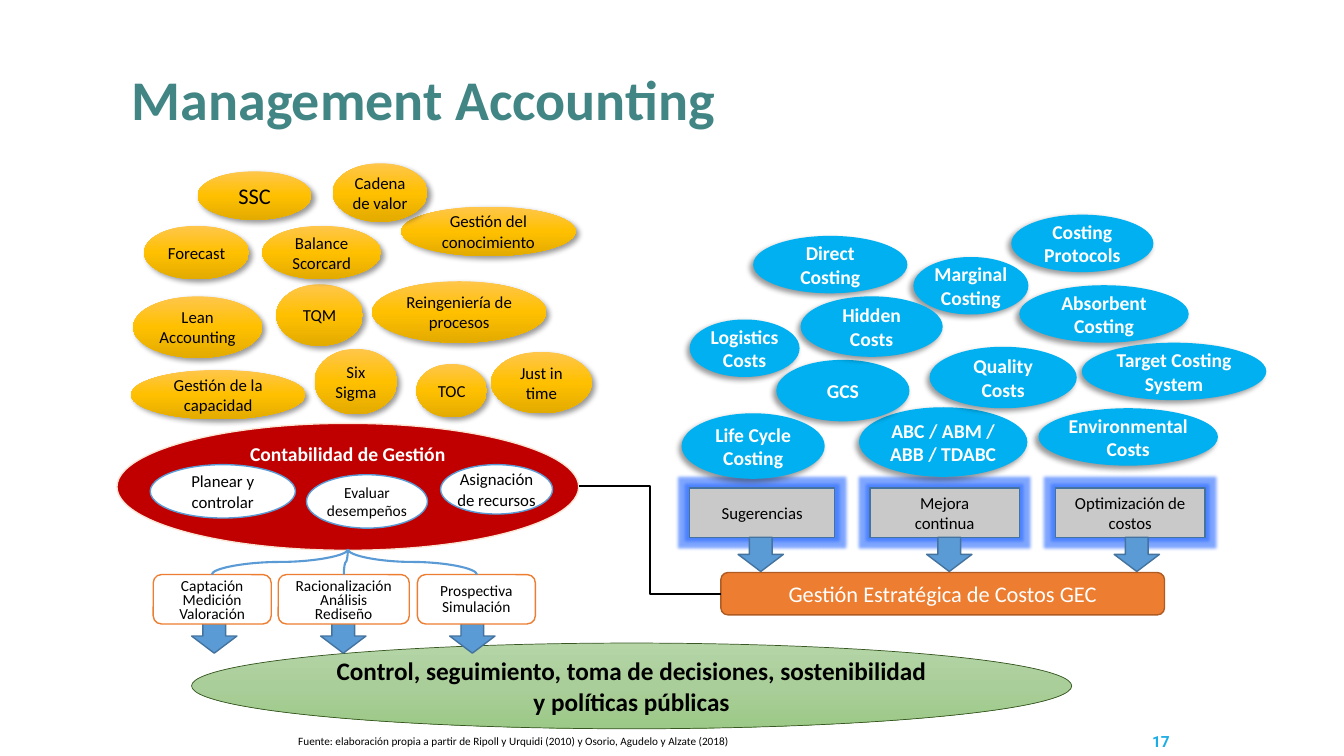
"""Build the Management Accounting slide."""
from copy import deepcopy

from lxml import etree
from pptx import Presentation
from pptx.dml.color import RGBColor
from pptx.enum.shapes import MSO_CONNECTOR, MSO_SHAPE
from pptx.enum.text import MSO_ANCHOR, PP_ALIGN
from pptx.oxml.ns import nsdecls, qn
from pptx.util import Pt

PX = 9144
OVAL, RECT = MSO_SHAPE.OVAL, MSO_SHAPE.RECTANGLE
ROUNDED, DOWN_ARROW = MSO_SHAPE.ROUNDED_RECTANGLE, MSO_SHAPE.DOWN_ARROW
CURVE, ELBOW = MSO_CONNECTOR.CURVE, MSO_CONNECTOR.ELBOW
TOP, MIDDLE, BOTTOM = MSO_ANCHOR.TOP, MSO_ANCHOR.MIDDLE, MSO_ANCHOR.BOTTOM
LEFT, CENTER = PP_ALIGN.LEFT, PP_ALIGN.CENTER

BLACK = RGBColor(0x00, 0x00, 0x00)
WHITE = RGBColor(0xFF, 0xFF, 0xFF)
TEAL = RGBColor(0x41, 0x85, 0x84)
RED = RGBColor(0xC0, 0x00, 0x00)
CREAM = RGBColor(0xFB, 0xE5, 0xD6)
BLUE = RGBColor(0x5B, 0x9B, 0xD5)
DARK_BLUE = RGBColor(0x43, 0x73, 0x9E)
SKY = RGBColor(0x00, 0xB0, 0xF0)
CYAN = RGBColor(0x1C, 0xAD, 0xE4)
GRAY = RGBColor(0xC9, 0xC9, 0xC9)
ORANGE = RGBColor(0xED, 0x7D, 0x31)
BROWN = RGBColor(0xAF, 0x5C, 0x24)
DARK_GREEN = RGBColor(0x38, 0x57, 0x23)
GREENS = [RGBColor(0xB5, 0xD5, 0xA7), RGBColor(0xAA, 0xCE, 0x9A), RGBColor(0x9C, 0xC9, 0x87)]
GOLDS = [RGBColor(0xFF, 0xC6, 0x4B), RGBColor(0xFF, 0xC0, 0x00), RGBColor(0xE3, 0xAB, 0x00)]

SHADOW = (
    f'<a:outerShdw {nsdecls("a")} blurRad="50800" dist="38100" dir="%d" algn="t" rotWithShape="0">'
    '<a:prstClr val="black"><a:alpha val="40000"/></a:prstClr></a:outerShdw>'
)
SHADOW_LEFT, SHADOW_RIGHT = SHADOW % 8100000, SHADOW % 2700000
GLOW = (
    f'<a:glow {nsdecls("a")} rad="63500"><a:srgbClr val="2A6BFF">'
    '<a:alpha val="60000"/></a:srgbClr></a:glow>'
)

presentation = Presentation()
presentation.slide_width, presentation.slide_height = 1333 * PX, 750 * PX
slide = presentation.slides.add_slide(presentation.slide_layouts[6])
shapes = slide.shapes


def add_box(kind, box, fill, line=None, line_width=1, effect=None):
    shape = shapes.add_shape(kind, *(length * PX for length in box))
    shape.shadow.inherit = False
    if effect:
        shape.element.spPr.find(qn("a:effectLst")).append(etree.fromstring(effect))
    if isinstance(fill, list):
        shape.fill.gradient()
        shape.fill.gradient_angle = 270
        stop_list = shape.element.spPr.find(qn("a:gradFill")).find(qn("a:gsLst"))
        stop_list.insert(1, deepcopy(stop_list[0]))
        for index, stop in enumerate(shape.fill.gradient_stops):
            stop.color.rgb = fill[index]
            stop.position = index / 2
    else:
        shape.fill.solid()
        shape.fill.fore_color.rgb = fill
    if line is None:
        shape.line.fill.background()
    else:
        shape.line.color.rgb = line
        shape.line.width = Pt(line_width)
    return shape


def write_text(shape, text, size=12, color=BLACK, bold=False, font="Calibri", align=CENTER,
               anchor=MIDDLE, insets=(0, 0, 0, 0), spacing=None):
    frame = shape.text_frame
    frame.word_wrap = True
    frame.vertical_anchor = anchor
    frame.margin_left, frame.margin_top, frame.margin_right, frame.margin_bottom = (
        inset * PX for inset in insets)
    frame.text = text
    for paragraph in frame.paragraphs:
        paragraph.alignment = align
        paragraph.line_spacing = spacing
        paragraph.font.name = font
        paragraph.font.size = Pt(size)
        paragraph.font.bold = bold
        paragraph.font.color.rgb = color


DEFAULT_INSETS = (10, 5, 10, 5)
for box, text, text_format in [
    ((121, 71, 1132, 66), "Management Accounting",
     dict(size=40, color=TEAL, bold=True, align=LEFT, anchor=BOTTOM, spacing=0.9,
          insets=DEFAULT_INSETS)),
    ((286, 720, 517, 28),
     "Fuente: elaboración propia a partir de Ripoll y Urquidi (2010) y Osorio, Agudelo y Alzate (2018)",
     dict(size=8, align=LEFT, anchor=TOP, spacing=1.3, insets=DEFAULT_INSETS)),
    ((1133, 721, 37, 29), "17",
     dict(size=11, color=CYAN, bold=True, font="Roboto", anchor=TOP, insets=(0, 5, 0, 5))),
]:
    text_box = shapes.add_textbox(*(length * PX for length in box))
    write_text(text_box, text, **text_format)

management = add_box(OVAL, (116, 420, 458, 126), RED, CREAM)
write_text(management, "Contabilidad de Gestión", size=14, color=WHITE, bold=True,
           anchor=TOP, insets=(10, 0, 10, 5))
for box, text, size, insets in [
    ((149, 461, 144, 53), "Planear y controlar", 12, DEFAULT_INSETS),
    ((304, 471, 120, 53), "Evaluar desempeños", 11, (0, 0, 0, 0)),
    ((437, 461, 111, 49), "Asignación de recursos", 12, (0, 0, 0, 0)),
]:
    write_text(add_box(OVAL, box, WHITE, BLUE), text, size=size, insets=insets)

control = add_box(OVAL, (190, 638, 873, 85), GREENS, DARK_GREEN, 0.5)
write_text(control, "Control, seguimiento, toma de decisiones, sostenibilidad y políticas públicas",
           size=18, bold=True, insets=DEFAULT_INSETS)

for left, width, text in [
    (684, 144, "Sugerencias"),
    (863, 148, "Mejora\ncontinua"),
    (1047, 148, "Optimización de costos"),
]:
    write_text(add_box(RECT, (left, 484, width, 49), GRAY, DARK_BLUE, effect=GLOW), text)

for top, lefts in [(533, (732, 919, 1105)), (614, (446, 318, 190))]:
    for left in lefts:
        add_box(DOWN_ARROW, (left, top, 45, 34), BLUE, DARK_BLUE)

strategic = add_box(ROUNDED, (715, 568, 440, 42), ORANGE, BROWN)
write_text(strategic, "Gestión Estratégica de Costos GEC", size=16, color=WHITE,
           insets=DEFAULT_INSETS)

for left, width, text, top_inset, spacing in [
    (152, 117, "Captación\nMedición\nValoración", 4, 10),
    (276, 130, "Racionalización\nAnálisis\nRediseño", 4, 10),
    (414, 117, "Prospectiva Simulación", 0, 12),
]:
    write_text(add_box(ROUNDED, (left, 570, width, 49), WHITE, ORANGE), text, size=11,
               insets=(0, top_inset, 0, 0), spacing=Pt(spacing))

link = shapes.add_connector(ELBOW, 574 * PX, 482 * PX, 715 * PX, 589 * PX)
link.end_connect(strategic, 1)
connectors = [(link, BLACK)]
START_X, START_Y, END_Y = 345, 545, 570
for end_x in (473, 210, 341):
    middle_x, middle_y = (START_X + end_x) / 2, (START_Y + END_Y) / 2
    half_width, half_height = (END_Y - START_Y) / 2, abs(end_x - START_X) / 2
    branch = shapes.add_connector(
        CURVE, int((middle_x - half_width) * PX), int((middle_y - half_height) * PX),
        int((middle_x + half_width) * PX), int((middle_y + half_height) * PX))
    transform = branch.element.spPr.find(qn("a:xfrm"))
    if end_x > START_X:
        transform.set("rot", "16200000")
        transform.set("flipH", "1")
    else:
        transform.set("rot", "5400000")
    connectors.append((branch, BLUE))
for connector, color in connectors:
    connector.line.color.rgb = color
    connector.line.width = Pt(1.5)
    etree.SubElement(connector.element.spPr, qn("a:effectLst"))

for box, text in [
    ((852, 404, 167, 69), "ABC / ABM / ABB / TDABC"),
    ((1011, 283, 168, 57), "Absorbent\nCosting"),
    ((747, 234, 153, 57), "Direct\nCosting"),
    ((1003, 213, 141, 57), "Costing Protocols"),
    ((906, 255, 114, 57), "Marginal\nCosting"),
    ((770, 357, 132, 61), "GCS"),
    ((1073, 340, 183, 57), "Target Costing System"),
    ((922, 344, 146, 61), "Quality\nCosts"),
    ((684, 317, 109, 57), "Logistics\nCosts"),
    ((794, 294, 141, 60), "Hidden\nCosts"),
    ((1030, 405, 178, 57), "Environmental Costs"),
    ((676, 410, 142, 65), "Life Cycle Costing"),
]:
    write_text(add_box(OVAL, box, SKY, effect=SHADOW_LEFT), text, size=14, color=WHITE, bold=True)

for box, text, size in [
    ((369, 279, 173, 61), "Reingeniería de procesos", 12),
    ((196, 170, 113, 48), "SSC", 16),
    ((143, 224, 104, 53), "Forecast", 12),
    ((413, 361, 70, 53), "TOC", 12),
    ((487, 349, 100, 61), "Just in time", 12),
    ((274, 282, 86, 61), "TQM", 12),
    ((312, 346, 82, 65), "Six Sigma", 12),
    ((132, 294, 128, 61), "Lean Accounting", 12),
    ((260, 224, 118, 53), "Balance Scorcard", 12),
    ((398, 205, 173, 49), "Gestión del conocimiento", 12),
    ((330, 162, 94, 58), "Cadena de valor", 12),
    ((130, 367, 173, 49), "Gestión de la capacidad", 12),
]:
    write_text(add_box(OVAL, box, GOLDS, effect=SHADOW_RIGHT), text, size=size)

presentation.save("out.pptx")
